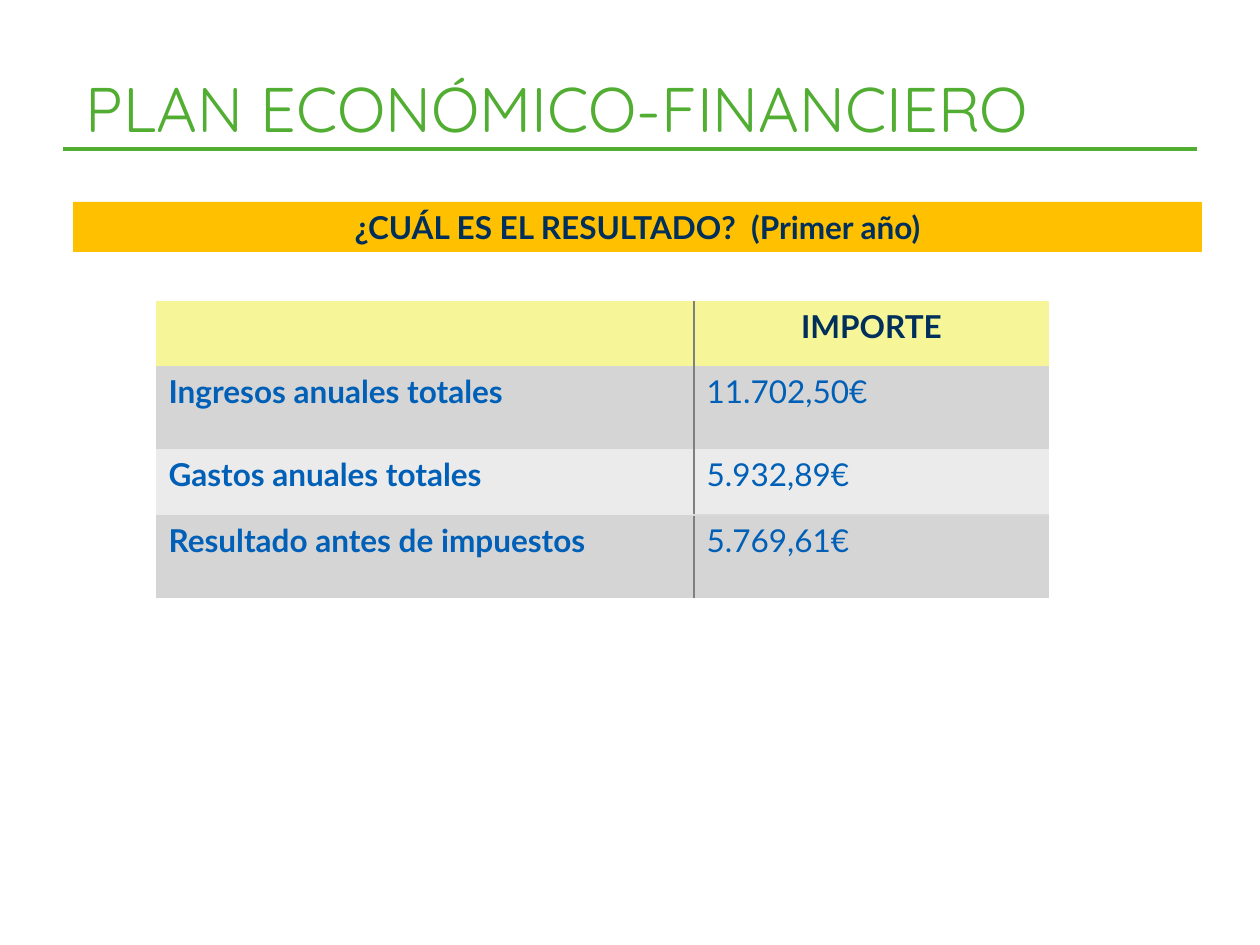
from dataclasses import dataclass

from lxml import etree
from pptx import Presentation
from pptx.dml.color import RGBColor
from pptx.enum.shapes import MSO_CONNECTOR, MSO_SHAPE
from pptx.enum.text import MSO_ANCHOR, PP_ALIGN
from pptx.oxml.ns import qn
from pptx.util import Emu, Pt

STRAIGHT = MSO_CONNECTOR.STRAIGHT
RECTANGLE = MSO_SHAPE.RECTANGLE
MIDDLE = MSO_ANCHOR.MIDDLE
LEFT, CENTER = PP_ALIGN.LEFT, PP_ALIGN.CENTER
TITLE_ONLY = 5
PLAIN_TABLE_STYLE = "{2D5ABB26-0587-4C30-8999-92F81FD0307C}"


@dataclass(frozen=True)
class Theme:
    green: str = "52AE32"
    amber: str = "FFC000"
    navy: str = "002F5B"
    blue: str = "005FB6"
    header_fill: str = "F6F698"
    dark_band: str = "D5D5D5"
    light_band: str = "EBEBEB"
    divider: str = "808080"
    row_rule: str = "D9D9D9"
    title_font: str = "Quicksand"
    body_font: str = "Lato"
    title_size: int = 36
    body_size: int = 18


@dataclass(frozen=True)
class ResultRow:
    concept: str
    amount: str
    height: int
    fill: str


THEME = Theme()
COLUMN_WIDTHS = (538, 355)
ROWS = (
    ResultRow("", "IMPORTE", 65, THEME.header_fill),
    ResultRow("Ingresos anuales totales", "11.702,50€", 83, THEME.dark_band),
    ResultRow("Gastos anuales totales", "5.932,89€", 66, THEME.light_band),
    ResultRow("Resultado antes de impuestos", "5.769,61€", 83, THEME.dark_band),
)


def px(length: int) -> Emu:
    return Emu(round(length * 914400 / 126))


def rgb(color: str) -> RGBColor:
    return RGBColor.from_string(color)


def write(frame, text: str, color: str, bold: bool = False, align=LEFT,
          font: str = THEME.body_font, size: int = THEME.body_size) -> None:
    frame.text = text
    paragraph = frame.paragraphs[0]
    paragraph.alignment = align
    for run in paragraph.runs:
        run.font.name = font
        run.font.size = Pt(size)
        run.font.bold = bold
        run.font.color.rgb = rgb(color)


def add_border(cell, side: str, color: str) -> None:
    """Put a 1 pt border on a side: lnL, lnR, lnT or lnB, in that order."""
    properties = cell._tc.get_or_add_tcPr()
    line = etree.Element(qn(f"a:{side}"), w=str(Pt(1)))
    fill = etree.SubElement(line, qn("a:solidFill"))
    etree.SubElement(fill, qn("a:srgbClr"), val=color)
    # Borders come before the cell fill
    properties.insert(len(properties.findall("*")) - 1, line)


def add_title(slide) -> None:
    title = slide.shapes.title
    title.left, title.top, title.width, title.height = px(73), px(58), px(1149), px(97)
    write(title.text_frame, "PLAN ECONÓMICO-FINANCIERO", THEME.green,
          font=THEME.title_font, size=THEME.title_size)
    title.text_frame.vertical_anchor = MIDDLE
    title.text_frame.paragraphs[0].line_spacing = Pt(44)

    underline = slide.shapes.add_connector(STRAIGHT, px(63), px(149), px(1197), px(149))
    underline.line.color.rgb = rgb(THEME.green)
    underline.line.width = Pt(2)
    etree.SubElement(underline._element.spPr, qn("a:effectLst"))


def add_question(slide) -> None:
    question = slide.shapes.add_shape(RECTANGLE, px(73), px(202), px(1129), px(50))
    question.shadow.inherit = False
    question.fill.solid()
    question.fill.fore_color.rgb = rgb(THEME.amber)
    question.line.fill.background()
    question.text_frame.word_wrap = True
    question.text_frame.vertical_anchor = MIDDLE
    write(question.text_frame, "¿CUÁL ES EL RESULTADO?  (Primer año)",
          THEME.navy, bold=True, align=CENTER)


def add_results(slide) -> None:
    frame = slide.shapes.add_table(
        len(ROWS), len(COLUMN_WIDTHS), px(156), px(301),
        px(sum(COLUMN_WIDTHS)), px(sum(row.height for row in ROWS)))
    results = frame.table
    results.first_row = results.horz_banding = False
    results._tbl.tblPr.find(qn("a:tableStyleId")).text = PLAIN_TABLE_STYLE
    for column, width in zip(results.columns, COLUMN_WIDTHS):
        column.width = px(width)

    for index, row in enumerate(ROWS):
        results.rows[index].height = px(row.height)
        concept, amount = results.cell(index, 0), results.cell(index, 1)
        for cell in (concept, amount):
            cell.fill.solid()
            cell.fill.fore_color.rgb = rgb(row.fill)
        write(concept.text_frame, row.concept, THEME.blue, bold=True)
        is_header = index == 0
        write(amount.text_frame, row.amount, THEME.navy if is_header else THEME.blue,
              bold=is_header, align=CENTER if is_header else LEFT)
        add_border(concept, "lnR", THEME.divider)
        add_border(amount, "lnL", THEME.divider)

    # Light rule above the final amount
    last = len(ROWS) - 1
    add_border(results.cell(last - 1, 1), "lnB", THEME.row_rule)
    add_border(results.cell(last, 1), "lnT", THEME.row_rule)


def main() -> None:
    presentation = Presentation()
    presentation.slide_width, presentation.slide_height = px(1260), px(945)
    slide = presentation.slides.add_slide(presentation.slide_layouts[TITLE_ONLY])
    add_title(slide)
    add_question(slide)
    add_results(slide)
    presentation.save("out.pptx")


if __name__ == "__main__":
    main()
